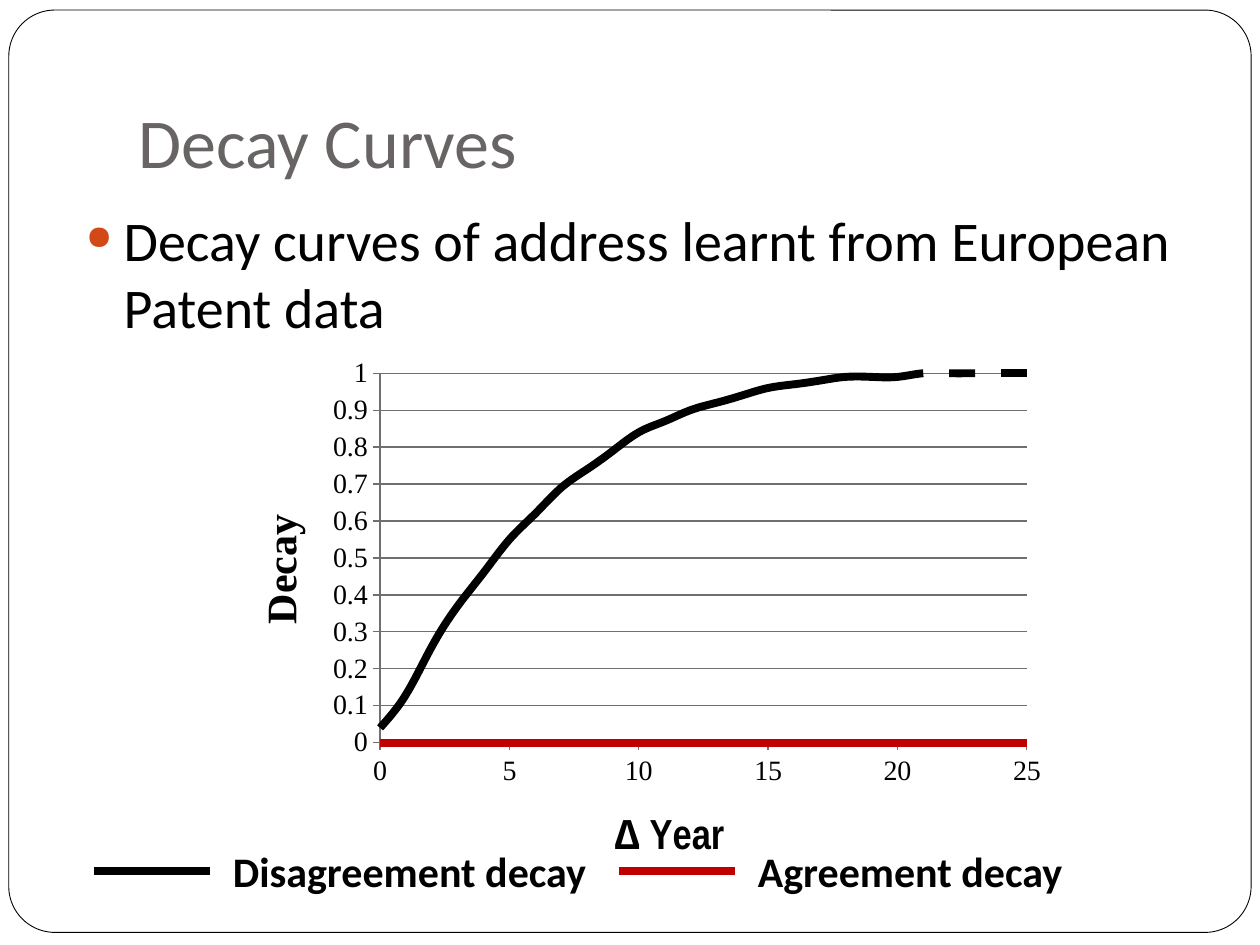
"""Build a slide showing decay curves of address over the years."""
from dataclasses import dataclass

from lxml import etree
from pptx import Presentation
from pptx.chart.data import XyChartData
from pptx.dml.color import RGBColor
from pptx.enum.chart import XL_CHART_TYPE, XL_TICK_MARK
from pptx.enum.shapes import MSO_CONNECTOR, MSO_SHAPE
from pptx.enum.text import MSO_ANCHOR, PP_ALIGN
from pptx.oxml.ns import qn
from pptx.util import Emu, Inches, Pt

SMOOTH_SCATTER = XL_CHART_TYPE.XY_SCATTER_SMOOTH_NO_MARKERS
OUTSIDE = XL_TICK_MARK.OUTSIDE
NO_TICK = XL_TICK_MARK.NONE
ELBOW = MSO_CONNECTOR.ELBOW
ROUNDED = MSO_SHAPE.ROUNDED_RECTANGLE
BOTTOM = MSO_ANCHOR.BOTTOM
LEFT = PP_ALIGN.LEFT

BLACK = RGBColor(0x00, 0x00, 0x00)
WHITE = RGBColor(0xFF, 0xFF, 0xFF)
RED = RGBColor(0xC0, 0x00, 0x00)
TITLE_GRAY = RGBColor(0x69, 0x64, 0x64)
GRID_GRAY = RGBColor(0x6F, 0x6F, 0x6F)
BULLET_ORANGE = RGBColor(0xD3, 0x48, 0x17)

SLIDE_WIDTH, SLIDE_HEIGHT = Inches(10), Inches(7.5)
COLUMNS, ROWS = 120, 90
CURVE_WIDTH = Pt(4.5)

DISAGREEMENT = [0.04, 0.13, 0.26, 0.37, 0.46, 0.55, 0.62, 0.69, 0.74, 0.79,
                0.84, 0.87, 0.9, 0.92, 0.94, 0.96, 0.97, 0.98, 0.99, 0.99,
                0.99, 1, 1, 1, 1, 1]


@dataclass(frozen=True)
class Area:
    """A rectangle in grid columns and rows."""
    column: float
    row: float
    columns: float
    rows: float

    def lengths(self) -> tuple[Emu, Emu, Emu, Emu]:
        """Return left, top, width and height."""
        return (Emu(round(SLIDE_WIDTH * self.column / COLUMNS)),
                Emu(round(SLIDE_HEIGHT * self.row / ROWS)),
                Emu(round(SLIDE_WIDTH * self.columns / COLUMNS)),
                Emu(round(SLIDE_HEIGHT * self.rows / ROWS)))


@dataclass(frozen=True)
class Curve:
    """A data series with its colour."""
    name: str
    values: list[float]
    color: RGBColor


@dataclass(frozen=True)
class AxisStyle:
    """Title, scale and title place of a chart axis."""
    title: str
    font: str
    maximum: float
    step: float
    title_x: float
    title_y: float


@dataclass(frozen=True)
class LegendKey:
    """A legend entry starting at a grid column."""
    label: str
    color: RGBColor
    column: float


CURVES = [Curve("Series 1", [0] * len(DISAGREEMENT), RED),
          Curve("Series 2", DISAGREEMENT, BLACK)]
YEAR_AXIS = AxisStyle("∆ Year", "Arial Narrow", 25, 5, 0.46, 0.86)
DECAY_AXIS = AxisStyle("Decay", "Times New Roman", 1, 0.1, 0.03, 0.3)
LEGEND = [LegendKey("Disagreement decay", BLACK, 9),
          LegendKey("Agreement decay", RED, 59)]


def style_font(font, name: str, size: float, color: RGBColor, bold: bool = False) -> None:
    """Set the look of a font."""
    font.name, font.size, font.bold = name, Pt(size), bold
    font.color.rgb = color


def add_frame(page) -> None:
    """Draw the rounded border behind the title."""
    frame = page.shapes.add_shape(ROUNDED, *Area(0.84, 0.96, 118.32, 87.84).lengths())
    frame.adjustments[0] = 0.05
    frame.shadow.inherit = False
    frame.fill.solid()
    frame.fill.fore_color.rgb = WHITE
    frame.line.color.rgb = BLACK
    frame.line.width = Pt(0.5)
    page.shapes.title.element.addprevious(frame.element)


def set_title(page, text: str) -> None:
    """Place and format the title."""
    title = page.shapes.title
    title.left, title.top, title.width, title.height = Area(12, 3.6, 102, 15).lengths()
    frame = title.text_frame
    frame.text = text
    frame.vertical_anchor = BOTTOM
    frame.margin_bottom = Inches(0.1)
    para = frame.paragraphs[0]
    para.alignment = LEFT
    style_font(para.runs[0].font, "Calibri", 40, TITLE_GRAY)


def add_text(page, area: Area, text: str, size: float, bold: bool = False):
    """Add a wrapped text box and return its paragraph."""
    box = page.shapes.add_textbox(*area.lengths())
    box.text_frame.word_wrap = True
    box.text_frame.text = text
    para = box.text_frame.paragraphs[0]
    style_font(para.runs[0].font, "Calibri", size, BLACK, bold)
    return para


def add_bullet(para) -> None:
    """Give a paragraph a coloured hanging bullet."""
    para.space_before = Pt(5.8)
    properties = para._p.get_or_add_pPr()
    indent = Inches(0.3)
    properties.set("marL", str(indent))
    properties.set("indent", str(-indent))
    color = etree.SubElement(properties, qn("a:buClr"))
    etree.SubElement(color, qn("a:srgbClr"), val=str(BULLET_ORANGE))
    etree.SubElement(properties, qn("a:buSzPct"), val="60000")
    etree.SubElement(properties, qn("a:buChar"), char="●")


def set_layout(parent, index: int, **shares: float) -> None:
    """Fix the place of a chart part as shares of the chart."""
    for old in parent.findall(qn("c:layout")):
        parent.remove(old)
    layout = etree.Element(qn("c:layout"))
    manual = etree.SubElement(layout, qn("c:manualLayout"))
    if "w" in shares:
        etree.SubElement(manual, qn("c:layoutTarget"), val="inner")
    for mode in ("xMode", "yMode"):
        etree.SubElement(manual, qn(f"c:{mode}"), val="edge")
    for key, share in shares.items():
        etree.SubElement(manual, qn(f"c:{key}"), val=str(share))
    parent.insert(index, layout)


def style_axis(axis, style: AxisStyle) -> None:
    """Set scale, ticks, labels and title of an axis."""
    axis.minimum_scale, axis.maximum_scale = 0, style.maximum
    axis.major_unit = style.step
    axis.major_tick_mark, axis.minor_tick_mark = OUTSIDE, NO_TICK
    axis.format.line.color.rgb = GRID_GRAY
    style_font(axis.tick_labels.font, "Times New Roman", 16, BLACK)
    axis.tick_labels.number_format = "General"
    axis.tick_labels.number_format_is_linked = False
    axis.axis_title.text_frame.text = style.title
    span = axis.axis_title.text_frame.paragraphs[0].runs[0]
    style_font(span.font, style.font, 24, BLACK, True)
    set_layout(axis.axis_title.element, 1, x=style.title_x, y=style.title_y)


def add_decay_chart(page) -> None:
    """Add the smooth scatter chart of both curves."""
    chart_data = XyChartData()
    for curve in CURVES:
        series = chart_data.add_series(curve.name)
        for year, value in enumerate(curve.values):
            series.add_data_point(year, value)
    area = Area(21, 33, 80, 51)
    chart = page.shapes.add_chart(SMOOTH_SCATTER, *area.lengths(), chart_data).chart
    chart.has_legend = chart.has_title = False
    style_font(chart.font, "Times New Roman", 10, BLACK)
    chart.plots[0].vary_by_categories = False
    plot_area = chart.element.find(f".//{qn('c:plotArea')}")
    for series, curve in zip(chart.plots[0].series, CURVES):
        series.format.line.color.rgb = curve.color
        series.format.line.width = CURVE_WIDTH
    for series_xml in plot_area.iter(qn("c:ser")):
        for old in series_xml.findall(qn("c:smooth")):
            series_xml.remove(old)
        etree.SubElement(series_xml, qn("c:smooth"), val="1")
    style_axis(chart.category_axis, YEAR_AXIS)
    style_axis(chart.value_axis, DECAY_AXIS)
    chart.category_axis.has_major_gridlines = False
    chart.value_axis.major_gridlines.format.line.color.rgb = GRID_GRAY
    set_layout(plot_area, 0, x=0.19, y=0.05, w=0.77, h=0.69)


def add_legend_key(page, key: LegendKey) -> None:
    """Draw a legend line with its label."""
    left, top, width, _ = Area(key.column, 82.92, 11, 0).lengths()
    line = page.shapes.add_connector(ELBOW, left, top, left + width, top)
    line.line.color.rgb = key.color
    line.line.width = CURVE_WIDTH
    etree.SubElement(line.element.spPr, qn("a:effectLst"))
    add_text(page, Area(key.column + 12, 79.92, 41, 6), key.label, 24, True)


def main() -> None:
    """Build and save the deck."""
    deck = Presentation()
    deck.slide_width, deck.slide_height = SLIDE_WIDTH, SLIDE_HEIGHT
    page = deck.slides.add_slide(deck.slide_layouts[5])
    add_frame(page)
    set_title(page, "Decay Curves")
    add_bullet(add_text(page, Area(7, 19, 108, 60),
                        "Decay curves of address learnt from European Patent data", 32))
    add_decay_chart(page)
    for key in LEGEND:
        add_legend_key(page, key)
    deck.save("out.pptx")


if __name__ == "__main__":
    main()
